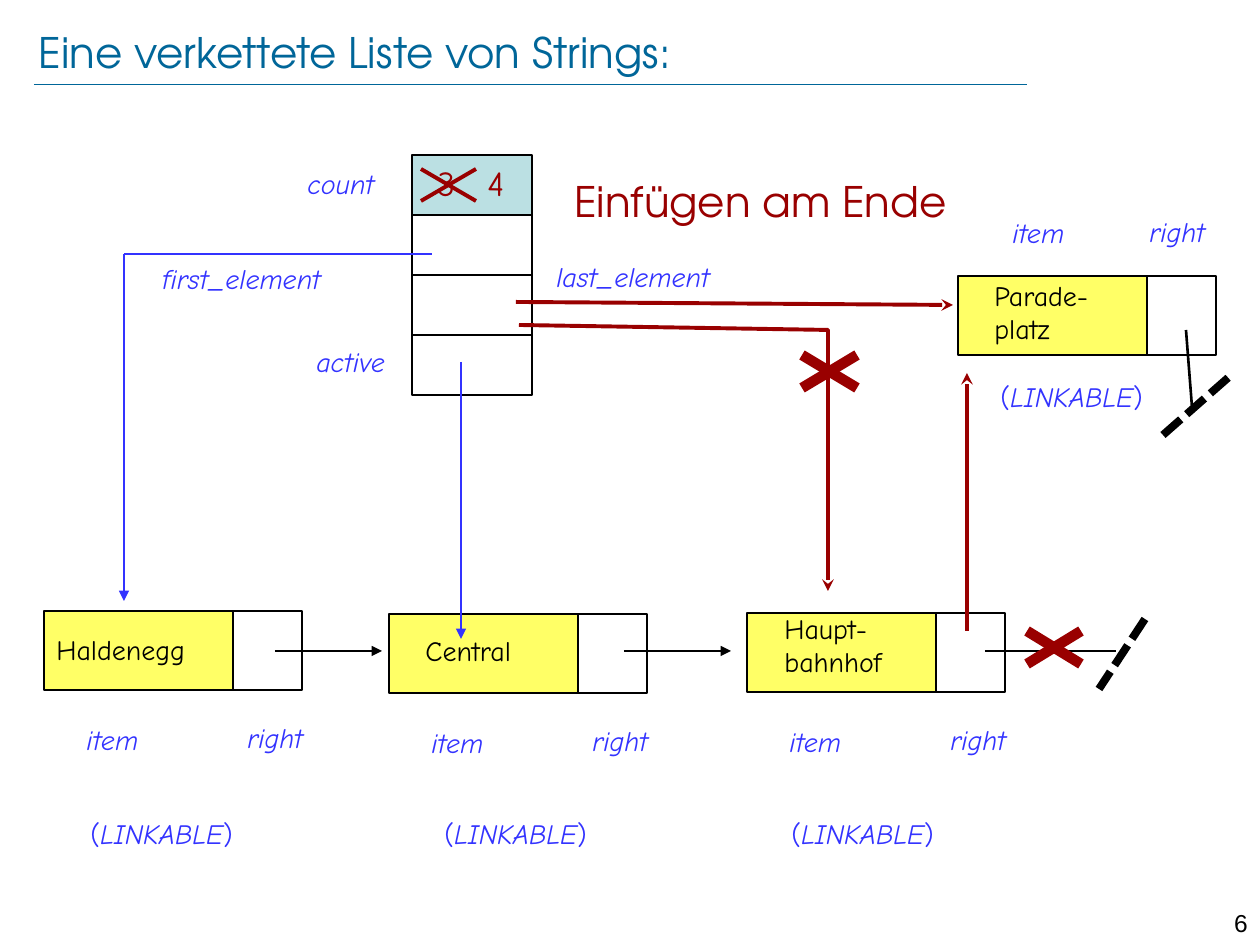
from lxml.etree import SubElement
from pptx import Presentation
from pptx.dml.color import RGBColor
from pptx.enum.dml import MSO_LINE
from pptx.enum.shapes import MSO_CONNECTOR, MSO_SHAPE
from pptx.enum.text import MSO_ANCHOR, PP_ALIGN
from pptx.oxml.ns import qn
from pptx.util import Emu, Pt

SCALE = 914400 / 126  # EMU per px

BLACK = RGBColor(0x00, 0x00, 0x00)
TEAL = RGBColor(0x00, 0x66, 0x99)
BLUE = RGBColor(0x33, 0x33, 0xFF)
RED = RGBColor(0x99, 0x00, 0x00)
YELLOW = RGBColor(0xFF, 0xFF, 0x66)
PALE_BLUE = RGBColor(0xBB, 0xE0, 0xE3)

HEADING = {"name": "TeX Gyre Adventor", "size": Pt(24)}
NAME = {"name": "Comic Neue", "size": Pt(16)}
LABEL = {**NAME, "italic": True}
COUNT = {"name": "Comic Neue", "size": Pt(20)}
NUMBER = {"name": "Arial", "size": Pt(14)}


def px(*values):
    return [Emu(round(v * SCALE)) for v in values]


def add_text(s, box, runs, color, align=PP_ALIGN.LEFT, anchor=MSO_ANCHOR.TOP, inset=None):
    """Place one paragraph of (text, format) runs; a newline is a line break."""
    tf = s.shapes.add_textbox(*px(*box)).text_frame
    tf.word_wrap = True
    tf.vertical_anchor = anchor
    if inset is not None:
        for side in ("left", "top", "right", "bottom"):
            setattr(tf, f"margin_{side}", Emu(inset))
    p = tf.paragraphs[0]
    p.alignment = align
    for text, fmt in runs:
        for i, line in enumerate(text.split("\n")):
            if i:
                p.add_line_break()
            r = p.add_run()
            r.text = line
            for key, value in fmt.items():
                setattr(r.font, key, value)
            r.font.color.rgb = color


def add_label(s, x, y, text, w=100):
    add_text(s, (x, y, w, 47), [(text, LABEL)], BLUE)


def add_rect(s, box, fill=None):
    sp = s.shapes.add_shape(MSO_SHAPE.RECTANGLE, *px(*box))
    sp.shadow.inherit = False
    if fill is None:
        sp.fill.background()
    else:
        sp.fill.solid()
        sp.fill.fore_color.rgb = fill
    style_line(sp, BLACK, 0.75)


def style_line(sp, color, width, head=None, dash=None):
    sp.line.color.rgb = color
    sp.line.width = Pt(width)
    if dash:
        sp.line.dash_style = dash
    if head:
        SubElement(sp.line._get_or_add_ln(), qn("a:tailEnd"), type=head)


def add_line(shapes, points, color, width, head=None, dash=None):
    cxn = shapes.add_connector(MSO_CONNECTOR.STRAIGHT, *px(*points))
    style_line(cxn, color, width, head, dash)
    SubElement(cxn._element.spPr, qn("a:effectLst"))


def add_cross(s, x, y, w, h, width):
    group = s.shapes.add_group_shape()
    add_line(group.shapes, (x + w, y, x, y + h), RED, width)
    add_line(group.shapes, (x, y, x + w, y + h), RED, width)


def add_header(s, x, y, w):
    add_text(s, (x + 5, y, 866, 58), [("Eine verkettete Liste von Strings:", HEADING)],
             TEAL, anchor=MSO_ANCHOR.MIDDLE, inset=0)
    add_line(s.shapes, (x, y + 61, x + w, y + 61), TEAL, 0.25)


def add_list_object(s, x, y):
    """The list header: four stacked cells with their field names."""
    w, h = 120, 60
    for i, fill in enumerate((PALE_BLUE, None, None, None)):
        add_rect(s, (x, y + i * h, w, h), fill)
    add_label(s, x - 117, y + 5, "count", 128)
    add_label(s, x - 262, y + 100, "first_element", 348)
    add_label(s, x + 132, y + 98, "last_element", 348)
    add_label(s, x - 108, y + 183, "active", 128)
    # Count goes from 3 to 4
    for dx, digit in ((13, "3"), (63, "4")):
        add_text(s, (x + dx, y, 128, 54), [(digit, COUNT)], RED)
    add_cross(s, x + 9, y + 14, 55, 32, 2.25)


def add_linkable(s, x, y, name, name_at, kind_at, item_at=(30, 105), right_at=(191, 103)):
    """One list cell; each label is offset from the cell's corner."""
    add_rect(s, (x, y, 189, 79), YELLOW)
    add_rect(s, (x + 189, y, 69, 79))
    add_text(s, (x + name_at[0], y + name_at[1], 198, 81 if "\n" in name else 47),
             [(name, NAME)], BLACK)
    for (dx, dy), text in ((item_at, "item"), (right_at, "right")):
        add_label(s, x + dx, y + dy, text)
    add_text(s, (x + kind_at[0], y + kind_at[1], 194, 47),
             [("(", NAME), ("LINKABLE", LABEL), (")", NAME)], BLUE)


def add_links(s):
    # Existing references
    add_line(s.shapes, (432, 254, 124, 254), BLUE, 0.75)
    add_line(s.shapes, (124, 254, 124, 601), BLUE, 0.75, "triangle")
    add_line(s.shapes, (461, 362, 461, 639), BLUE, 0.75, "triangle")
    for x in (275, 624):
        add_line(s.shapes, (x, 651, x + 107, 651), BLACK, 0.75, "triangle")
    # Void ends
    for link, end in (((985, 651, 1116, 651), (1145, 619, 1099, 689)),
                      ((1186, 330, 1192, 407), (1163, 435, 1229, 377))):
        add_line(s.shapes, link, BLACK, 1.5)
        add_line(s.shapes, end, BLACK, 4.5, dash=MSO_LINE.SQUARE_DOT)
    # New references
    add_line(s.shapes, (967, 631, 967, 373), RED, 2.25, "stealth")
    add_line(s.shapes, (516, 302, 953, 305), RED, 2.25, "stealth")
    # Old last_element reference
    fb = s.shapes.build_freeform(519, 325, scale=SCALE)
    fb.add_line_segments([(828, 330), (828, 591)], close=False)
    sp = fb.convert_to_shape()
    sp.shadow.inherit = False
    sp.fill.background()
    style_line(sp, RED, 2.25, "stealth")
    # Removed references
    add_cross(s, 1027, 631, 54, 33, 6)
    add_cross(s, 802, 355, 55, 33, 6)


def main():
    prs = Presentation()
    prs.slide_width, prs.slide_height = px(1260, 945)
    s = prs.slides.add_slide(prs.slide_layouts[6])

    add_header(s, 34, 23, 993)
    add_list_object(s, 412, 155)
    add_linkable(s, 44, 611, "Haldenegg", (0, 15), (34, 199))
    add_linkable(s, 389, 614, "Central", (24, 13), (43, 196))
    add_linkable(s, 747, 613, "Haupt-\nbahnhof", (25, -8), (32, 197))
    add_linkable(s, 958, 276, "Parade-\nplatz", (24, -4), (30, 97), (42, -67), (179, -68))
    add_links(s)
    add_text(s, (562, 151, 546, 100), [("Einfügen am Ende", HEADING)], RED,
             anchor=MSO_ANCHOR.MIDDLE)
    add_text(s, (1191, 902, 69, 30), [("6", NUMBER)], BLACK, align=PP_ALIGN.RIGHT)

    prs.save("out.pptx")


if __name__ == "__main__":
    main()
